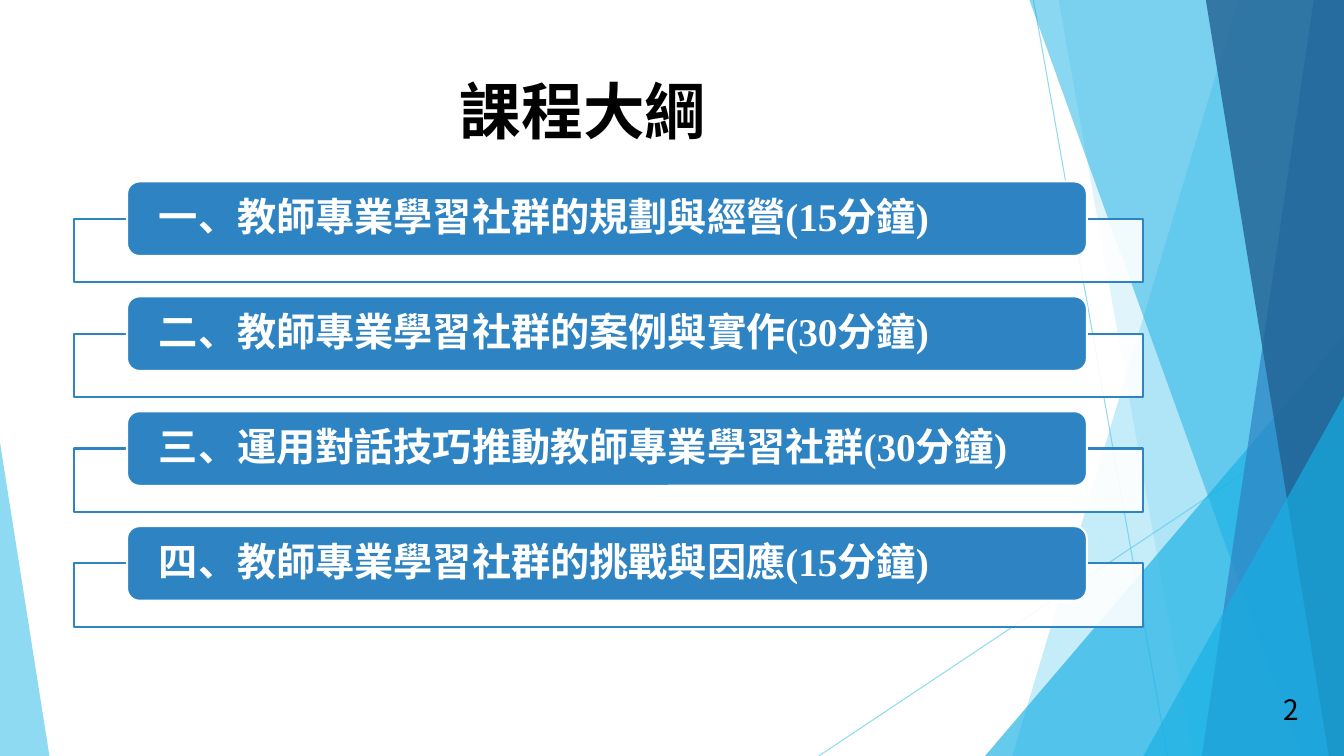
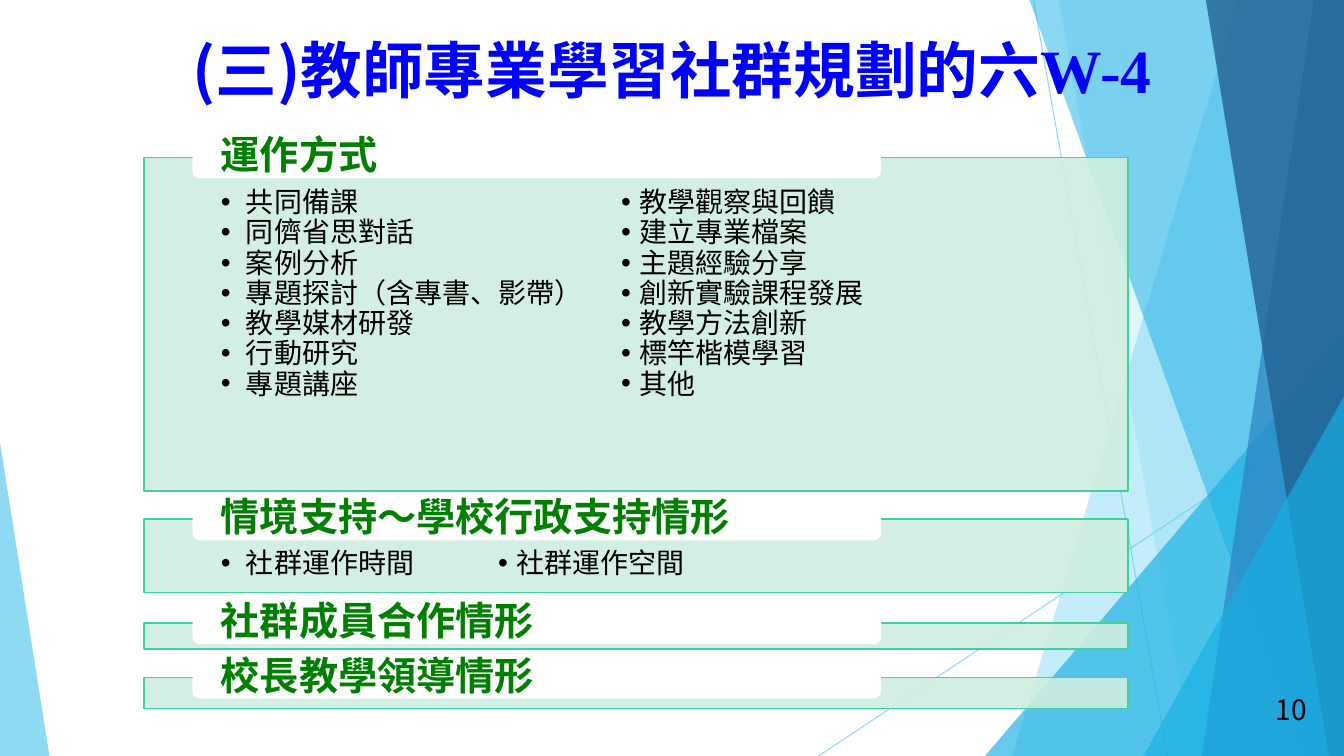
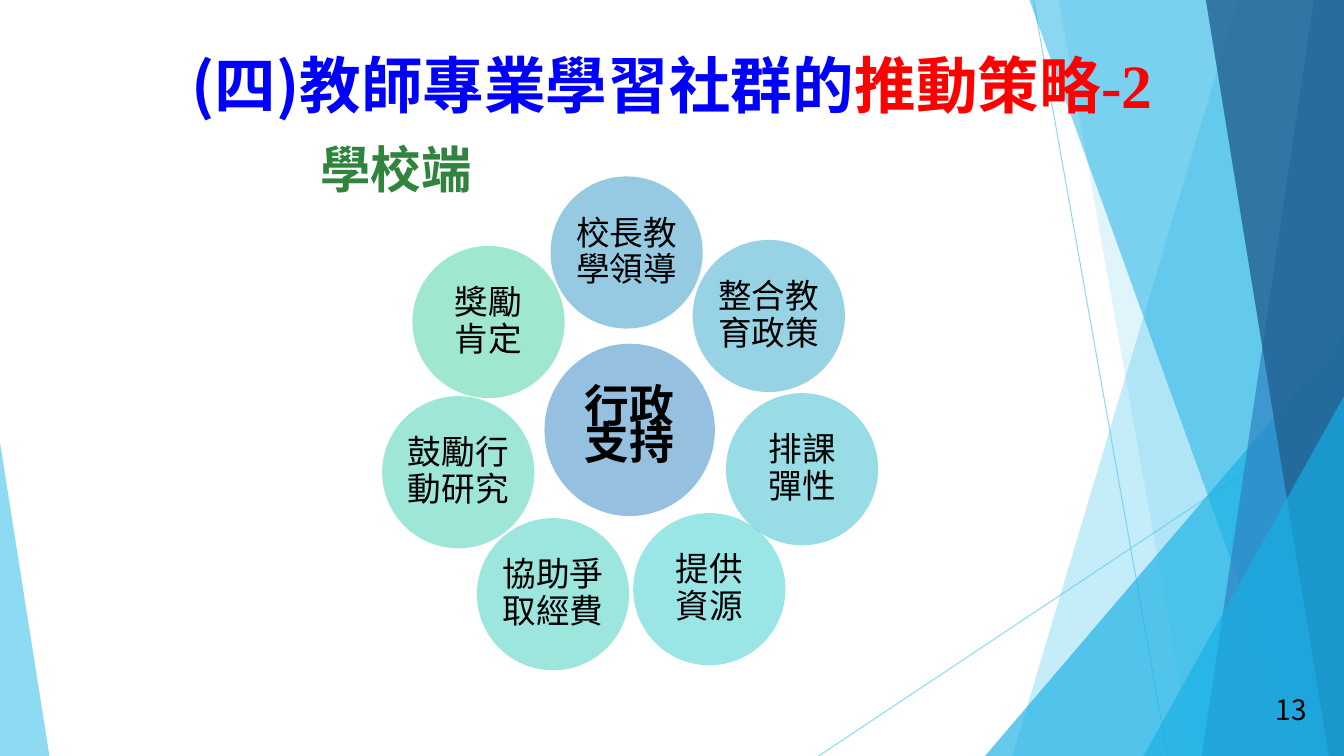
from lxml import etree
from pptx import Presentation
from pptx.dml.color import RGBColor
from pptx.enum.shapes import MSO_CONNECTOR, MSO_SHAPE
from pptx.enum.text import MSO_ANCHOR, PP_ALIGN
from pptx.oxml.ns import qn
from pptx.util import Inches, Pt

WIDTH, HEIGHT = 13.33, 7.5

BLACK = RGBColor(0x00, 0x00, 0x00)
WHITE = RGBColor(0xFF, 0xFF, 0xFF)
SKY = RGBColor(0x5F, 0xCB, 0xEF)
CYAN = RGBColor(0x17, 0xB0, 0xE4)
BLUE = RGBColor(0x2E, 0x83, 0xC3)
NAVY = RGBColor(0x22, 0x62, 0x92)
TITLE_BLUE = RGBColor(0x00, 0x00, 0xFF)
TITLE_RED = RGBColor(0xFF, 0x00, 0x00)
HEADING_GREEN = RGBColor(0x00, 0x80, 0x00)
LABEL_GREEN = RGBColor(0x31, 0x84, 0x3D)
MINT = RGBColor(0xCF, 0xEE, 0xE0)
GREEN = RGBColor(0x42, 0xD0, 0xA2)

CJK = "Noto Sans CJK SC"
SERIF = "Times New Roman"

TITLE = {"name": CJK, "size": Pt(44), "bold": True, "color": TITLE_BLUE}
OUTLINE_TITLE = TITLE | {"name": "Arial", "color": BLACK}
AGENDA = {"name": SERIF, "size": Pt(28), "bold": True, "color": WHITE}
HEADING = {"name": "Arial", "size": Pt(28), "bold": True, "color": HEADING_GREEN}
BULLET = {"name": "Arial", "size": Pt(20), "color": BLACK}
PETAL = {"name": "Roboto", "size": Pt(24), "color": BLACK}
CORE = PETAL | {"size": Pt(32), "bold": True}
LABEL = {"name": "Roboto", "size": Pt(36), "bold": True, "color": LABEL_GREEN}
NUMBER = {"name": CJK, "size": Pt(20), "color": BLACK}


def set_opacity(shape, percent):
    color = shape.element.spPr.find(".//" + qn("a:srgbClr"))
    etree.SubElement(color, qn("a:alpha"), val=str(percent * 1000))


def paint(shape, fill, opacity=100, line=None, line_width=1):
    shape.shadow.inherit = False
    shape.fill.solid()
    shape.fill.fore_color.rgb = fill
    if opacity < 100:
        set_opacity(shape, opacity)
    if line is None:
        shape.line.fill.background()
    else:
        shape.line.color.rgb = line
        shape.line.width = Pt(line_width)
    return shape


def add_box(slide, kind, box, fill, **look):
    shape = slide.shapes.add_shape(kind, *map(Inches, box))
    return paint(shape, fill, **look)


def add_run(paragraph, text, font_format):
    run = paragraph.add_run()
    run.text = text
    for name, value in font_format.items():
        if name == "color":
            run.font.color.rgb = value
        else:
            setattr(run.font, name, value)
    latin = run.font._element.find(qn("a:latin"))
    latin.addnext(latin.makeelement(qn("a:ea"), {"typeface": CJK}))


def write(shape, paragraphs, anchor=MSO_ANCHOR.MIDDLE, inset=(0.1, 0.05),
          align=PP_ALIGN.LEFT, spacing=None):
    """Fill a shape with paragraphs, each a list of (text, font format) runs."""
    frame = shape.text_frame
    side, end = map(Inches, inset)
    settings = {"word_wrap": True, "vertical_anchor": anchor,
                "margin_left": side, "margin_right": side,
                "margin_top": end, "margin_bottom": end}
    for name, value in settings.items():
        setattr(frame, name, value)
    for index, runs in enumerate(paragraphs):
        paragraph = frame.add_paragraph() if index else frame.paragraphs[0]
        paragraph.alignment = align
        paragraph.line_spacing = spacing
        for text, font_format in runs:
            add_run(paragraph, text, font_format)
    return frame


def add_text(slide, box, paragraphs, **layout):
    return write(slide.shapes.add_textbox(*map(Inches, box)), paragraphs, **layout)


def add_title(slide, top, *runs, left=0, width=WIDTH):
    add_text(slide, (left, top, width, 0.89), [runs],
             anchor=MSO_ANCHOR.TOP, align=PP_ALIGN.CENTER)


def add_number(slide, number):
    add_text(slide, (12.46, 6.79, 0.69, 0.5), [[(str(number), NUMBER)]],
             align=PP_ALIGN.CENTER)


def add_bullets(slide, left, top, items, width=3.8, indent=0.25):
    frame = add_text(slide, (left, top, width, 0.3 * len(items)),
                     [[(item, BULLET)] for item in items],
                     anchor=MSO_ANCHOR.TOP, inset=(0, 0), spacing=0.9)
    for paragraph in frame.paragraphs:
        properties = paragraph._p.get_or_add_pPr()
        properties.set("marL", str(Inches(indent)))
        properties.set("indent", str(-Inches(indent)))
        etree.SubElement(properties, qn("a:buFont"), typeface="Arial")
        etree.SubElement(properties, qn("a:buChar"), char="•")


def add_thin_line(slide, start, end):
    line = slide.shapes.add_connector(MSO_CONNECTOR.STRAIGHT, *map(Inches, start + end))
    line.line.color.rgb = SKY
    line.line.width = Pt(0.75)
    set_opacity(line, 70)
    etree.SubElement(line.element.spPr, qn("a:effectLst"))


def add_band(slide, top_x, bottom_x, color, opacity):
    """A full-height band from a slanted left side to the right slide edge."""
    builder = slide.shapes.build_freeform(Inches(top_x), 0)
    corners = [(WIDTH, 0), (WIDTH, HEIGHT), (bottom_x, HEIGHT)]
    builder.add_line_segments([(Inches(x), Inches(y)) for x, y in corners])
    paint(builder.convert_to_shape(), color, opacity)


def add_corner(slide, left, top, width, color, opacity, apex):
    triangle = add_box(slide, MSO_SHAPE.ISOSCELES_TRIANGLE,
                       (left, top, width, HEIGHT - top), color, opacity=opacity)
    triangle.adjustments[0] = apex


def move_backdrop_to_layout(slide):
    """Draw the facets on an empty slide, then move them to its layout."""
    layout = slide.slide_layout
    for placeholder in list(layout.placeholders):
        layout.shapes.element.remove(placeholder.element)
    add_thin_line(slide, (10.25, 0), (11.58, HEIGHT))
    add_thin_line(slide, (WIDTH, 4.03), (8.12, HEIGHT))
    add_band(slide, 12.28, 10.04, SKY, 36)
    add_band(slide, 10.5, 11.83, SKY, 20)
    add_corner(slide, 9.77, 3.33, 3.56, CYAN, 66, apex=1)
    add_band(slide, 10.21, 12.91, CYAN, 50)
    add_band(slide, 13.03, 11.92, BLUE, 70)
    add_band(slide, 11.96, 13.18, NAVY, 80)
    add_corner(slide, 11.34, 3.93, 1.99, CYAN, 66, apex=1)
    add_corner(slide, 0, 4.39, 0.49, SKY, 70, apex=0)
    for shape in list(slide.shapes):
        layout.shapes.element.append(shape.element)


def build_outline(slide):
    add_title(slide, 0.67, ("課程大綱", OUTLINE_TITLE), left=0.74, width=10.09)
    topics = [
        "一、教師專業學習社群的規劃與經營(15分鐘)",
        "二、教師專業學習社群的案例與實作(30分鐘)",
        "三、運用對話技巧推動教師專業學習社群(30分鐘)",
        "四、教師專業學習社群的挑戰與因應(15分鐘)",
    ]
    for index, topic in enumerate(topics):
        top = 1.8 + 1.14 * index
        add_box(slide, MSO_SHAPE.RECTANGLE, (0.73, top + 0.37, 10.61, 0.63), WHITE,
                opacity=90, line=BLUE, line_width=1.5)
        bar = add_box(slide, MSO_SHAPE.ROUNDED_RECTANGLE, (1.26, top, 9.52, 0.74),
                      BLUE, line=WHITE, line_width=1.5)
        write(bar, [[(topic, AGENDA)]], inset=(0.28, 0), spacing=0.9)
    add_number(slide, 2)


def build_operation(slide):
    sections = [
        ("運作方式", 1.56, 3.31),
        ("情境支持〜學校行政支持情形", 5.15, 0.73),
        ("社群成員合作情形", 6.18, 0.26),
        ("校長教學領導情形", 6.72, 0.31),
    ]
    for heading, top, height in sections:
        add_box(slide, MSO_SHAPE.RECTANGLE, (1.43, top, 9.76, height), MINT,
                opacity=90, line=GREEN)
        tab = add_box(slide, MSO_SHAPE.ROUNDED_RECTANGLE,
                      (1.91, top - 0.21, 6.83, 0.42), WHITE)
        write(tab, [[(heading, HEADING)]], inset=(0.26, 0), spacing=0.9)
    add_bullets(slide, 2.19, 1.87, [
        "共同備課", "同儕省思對話", "案例分析", "專題探討（含專書、影帶）",
        "教學媒材研發", "行動研究", "專題講座"])
    add_bullets(slide, 6.16, 1.87, [
        "教學觀察與回饋", "建立專業檔案", "主題經驗分享", "創新實驗課程發展",
        "教學方法創新", "標竿楷模學習", "其他"], indent=0.18)
    add_bullets(slide, 2.19, 5.45, ["社群運作時間"], width=2.5)
    add_bullets(slide, 4.94, 5.45, ["社群運作空間"], width=2.5, indent=0.18)
    add_title(slide, 0.27, ("(三)教師專業學習社群規劃的六", TITLE),
              ("W-4", TITLE | {"name": SERIF}))
    add_number(slide, 10)


def add_circle(slide, box, color, lines, font_format, spacing):
    circle = add_box(slide, MSO_SHAPE.OVAL, box, color, opacity=50)
    write(circle, [[(line, font_format)] for line in lines], inset=(0.02, 0.02),
          align=PP_ALIGN.CENTER, spacing=spacing)


def build_strategy(slide):
    add_circle(slide, (5.4, 3.41, 1.69, 1.71), BLUE, ["行政支持"], CORE, 0.7)
    petals = [
        (5.46, 1.75, "2F96C7", ["校長教學領導"]),
        (6.87, 2.38, "30A9CA", ["整合教育政策"]),
        (7.2, 3.9, "32BDCD", ["排課", "彈性"]),
        (6.28, 5.09, "36CECE", ["提供", "資源"]),
        (4.73, 5.14, "3ACFBF", ["協助爭取經費"]),
        (3.79, 3.93, "3ECFB0", ["鼓勵行動研究"]),
        (4.09, 2.44, "42D0A2", ["獎勵", "肯定"]),
    ]
    for left, top, color, lines in petals:
        add_circle(slide, (left, top, 1.51, 1.51), RGBColor.from_string(color),
                   lines, PETAL, 0.9)
    red = TITLE | {"color": TITLE_RED}
    add_title(slide, 0.42, ("(四)教師專業學習社群的", TITLE), ("推動策略", red),
              ("-2", red | {"name": SERIF}))
    add_text(slide, (3.08, 1.32, 1.82, 0.71), [[("學校端", LABEL)]],
             anchor=MSO_ANCHOR.TOP)
    add_number(slide, 13)


def main():
    presentation = Presentation()
    presentation.slide_width = Inches(WIDTH)
    presentation.slide_height = Inches(HEIGHT)
    blank = presentation.slide_layouts[6]
    builders = [build_outline, build_operation, build_strategy]
    slides = [presentation.slides.add_slide(blank) for _ in builders]
    move_backdrop_to_layout(slides[0])
    for build, slide in zip(builders, slides):
        build(slide)
    presentation.save("out.pptx")


if __name__ == "__main__":
    main()
